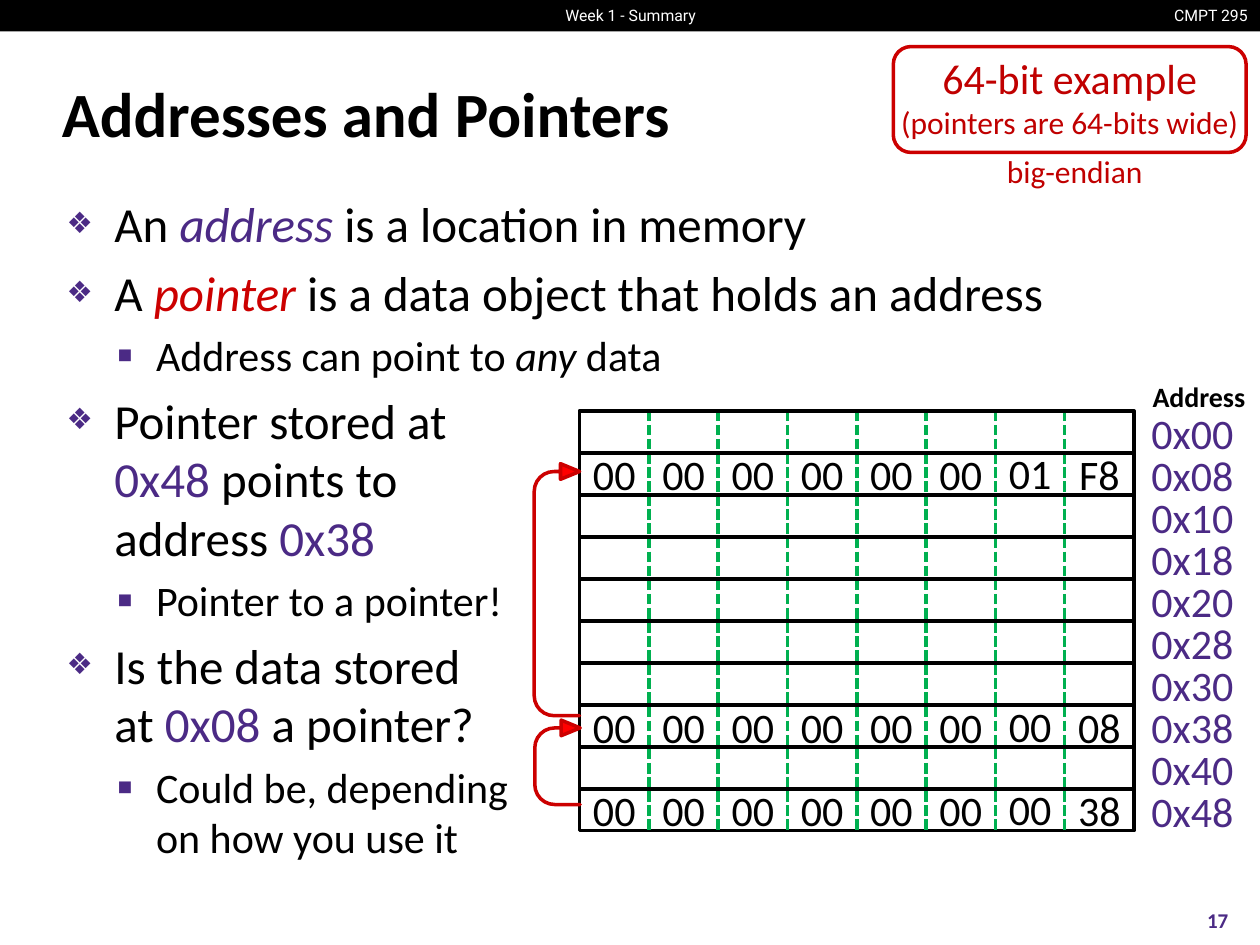
import dataclasses
import typing

import lxml.etree
import pptx
import pptx.dml.color
import pptx.enum.dml
import pptx.enum.shapes
import pptx.enum.text
import pptx.oxml.ns
import pptx.util

Pt = pptx.util.Pt
ALIGN = pptx.enum.text.PP_ALIGN
ANCHOR = pptx.enum.text.MSO_ANCHOR
SHAPE = pptx.enum.shapes.MSO_SHAPE
FIT = pptx.enum.text.MSO_AUTO_SIZE.SHAPE_TO_FIT_TEXT
BLACK, WHITE, PURPLE = "000000", "FFFFFF", "4B2A85"
RED, DARK_RED, BRIGHT_RED, GREEN = "CC0000", "C00000", "FF0000", "00B050"

# Memory grid, in points
GRID_LEFT, GRID_TOP = 331.2, 234.72
ROWS, COLUMNS = 10, 8
ROW_HEIGHT, CELL_WIDTH = 24, 39.6

Place = tuple[float, float, float, float]
GROWING = {"word_wrap": False, "auto_size": FIT}
TIGHT = {"word_wrap": False, "margin_left": 0, "margin_right": 0,
         "margin_top": 0, "margin_bottom": 0}


@dataclasses.dataclass
class Span:
    text: str
    size: float = 24
    color: str = BLACK
    bold: bool = False
    italic: bool = False
    font: str = "Calibri"


@dataclasses.dataclass
class Bullet:
    level: int
    spans: list[Span]


@dataclasses.dataclass
class BulletStyle:
    symbol: str
    percent: int
    left: float
    hanging: float


@dataclasses.dataclass
class MemoryWord:
    row: int
    lift: float
    data: str


def rgb(value: str) -> pptx.dml.color.RGBColor:
    return pptx.dml.color.RGBColor.from_string(value)


def apply(target: typing.Any, formats: dict) -> None:
    for name, value in formats.items():
        setattr(target, name, value)


def write(para, spans: list[Span]) -> None:
    for span in spans:
        for number, piece in enumerate(span.text.split("\n")):
            if number:
                para.add_line_break()
            run = para.add_run()
            run.text = piece
            apply(run.font, {"name": span.font, "size": Pt(span.size),
                             "bold": span.bold, "italic": span.italic})
            run.font.color.rgb = rgb(span.color)


def fill_frame(box, lines: list[Span], align=ALIGN.LEFT, formats: dict | None = None) -> None:
    frame = box.text_frame
    apply(frame, {"word_wrap": True, **(formats or {})})
    for number, span in enumerate(lines):
        para = frame.add_paragraph() if number else frame.paragraphs[0]
        para.alignment = align
        write(para, [span])


def add_text(page, place: Place, span: Span, align=ALIGN.LEFT, formats: dict | None = None) -> None:
    box = page.shapes.add_textbox(*map(Pt, place))
    fill_frame(box, [span], align, formats)


def add_box(page, kind, place: Place, fill: str | None = None, line: str | None = None):
    box = page.shapes.add_shape(kind, *map(Pt, place))
    box.shadow.inherit = False
    if fill:
        box.fill.solid()
        box.fill.fore_color.rgb = rgb(fill)
    else:
        box.fill.background()
    if line:
        box.line.color.rgb = rgb(line)
        box.line.width = Pt(2)
    else:
        box.line.fill.background()
    return box


def add_divider(page, x: float) -> None:
    line = page.shapes.add_connector(
        pptx.enum.shapes.MSO_CONNECTOR.STRAIGHT,
        Pt(x), Pt(GRID_TOP), Pt(x), Pt(GRID_TOP + ROWS * ROW_HEIGHT))
    line.line.color.rgb = rgb(GREEN)
    apply(line.line, {"width": Pt(2), "dash_style": pptx.enum.dml.MSO_LINE.SQUARE_DOT})
    child(line._element.spPr, "effectLst")


def add_row(page, row: int, fill: str | None = None) -> None:
    add_box(page, SHAPE.RECTANGLE, (GRID_LEFT, GRID_TOP + row * ROW_HEIGHT,
                                    COLUMNS * CELL_WIDTH, ROW_HEIGHT), fill, BLACK)


def add_pointer(page, place: Place) -> None:
    arrow = add_box(page, SHAPE.U_TURN_ARROW, place, BRIGHT_RED, RED)
    arrow.rotation = 270
    for number, value in enumerate((0, 0.172, 0.42, 0.438, 1)):
        arrow.adjustments[number] = value


def child(parent, name: str, **attributes: str):
    return lxml.etree.SubElement(parent, pptx.oxml.ns.qn("a:" + name), attributes)


def style_bullet(para, style: BulletStyle) -> None:
    properties = para._p.get_or_add_pPr()
    properties.set("marL", str(Pt(style.left)))
    properties.set("indent", str(Pt(-style.hanging)))
    child(child(properties, "spcBef"), "spcPct", val="20000")
    child(child(properties, "buClr"), "srgbClr", val=PURPLE)
    child(properties, "buSzPct", val=str(style.percent * 1000))
    child(properties, "buFont", typeface="Calibri")
    child(properties, "buChar", char=style.symbol)


BULLET_STYLES = [BulletStyle("❖", 60, 27.36, 27.36), BulletStyle("▪", 110, 51.12, 22.32)]
BULLETS = [
    Bullet(0, [Span("An ", 28), Span("address ", 28, PURPLE, italic=True),
               Span("is a location in memory", 28)]),
    Bullet(0, [Span("A ", 28), Span("pointer ", 28, RED, italic=True),
               Span("is a data object that holds an address", 28)]),
    Bullet(1, [Span("Address can point to "), Span("any", italic=True), Span(" data")]),
    Bullet(0, [Span("Pointer stored at\n", 28), Span("0x48", 28, PURPLE),
               Span(" points to \naddress ", 28), Span("0x38", 28, PURPLE)]),
    Bullet(1, [Span("Pointer to a pointer!")]),
    Bullet(0, [Span("Is the data stored\nat ", 28), Span("0x08", 28, PURPLE),
               Span(" a pointer?", 28)]),
    Bullet(1, [Span("Could be, depending\non how you use it")]),
]
WORDS = [
    MemoryWord(1, 2.4, "00 00 00 00 00 00 01 F8"),
    MemoryWord(7, 1.7, "00 00 00 00 00 00 00 08"),
    MemoryWord(9, 2.2, "00 00 00 00 00 00 00 38"),
]


def main() -> None:
    deck = pptx.Presentation()
    apply(deck, {"slide_width": Pt(720), "slide_height": Pt(540)})
    page = deck.slides.add_slide(deck.slide_layouts[5])

    # Header bar
    add_box(page, SHAPE.RECTANGLE, (0, 0, 720, 18), BLACK)
    add_text(page, (661.68, 0, 58.32, 18), Span("CMPT 295", 9, WHITE, font="Roboto"),
             ALIGN.RIGHT, GROWING)
    add_text(page, (309.6, 0, 101.52, 18), Span("Week 1 - Summary", 9, WHITE, font="Roboto"),
             ALIGN.CENTER, GROWING)

    # Title
    title = page.shapes.title
    apply(title, {"left": Pt(28.08), "top": Pt(34.56), "width": Pt(661.68), "height": Pt(59.76)})
    fill_frame(title, [Span("Addresses and Pointers", 36, bold=True)],
               formats={"vertical_anchor": ANCHOR.MIDDLE})

    # Bullets
    body = page.shapes.add_textbox(Pt(30.96), Pt(107.28), Pt(658.8), Pt(391.68))
    body.text_frame.word_wrap = True
    for number, bullet in enumerate(BULLETS):
        para = body.text_frame.add_paragraph() if number else body.text_frame.paragraphs[0]
        para.level = bullet.level
        style_bullet(para, BULLET_STYLES[bullet.level])
        write(para, bullet.spans)

    # Page number
    add_text(page, (671.76, 511.2, 48.24, 28.8), Span("17", 12, PURPLE, bold=True),
             ALIGN.CENTER, {"vertical_anchor": ANCHOR.MIDDLE})

    # Memory grid with its addresses
    add_row(page, ROWS - 1, WHITE)
    for row in range(ROWS):
        add_text(page, (650.88, 229.2 + row * ROW_HEIGHT, 61.92, 36),
                 Span(f"0x{row * COLUMNS:02X}", color=PURPLE), formats=GROWING)
    for column in range(1, COLUMNS):
        add_divider(page, GRID_LEFT + column * CELL_WIDTH)
    for row in range(ROWS - 1):
        add_row(page, row)
    add_text(page, (650.88, 213.12, 68.4, 26.64), Span("Address", 16, bold=True),
             ALIGN.CENTER, GROWING)

    # Pointer arrows
    add_pointer(page, (246.24, 324, 144, 25.92))
    add_pointer(page, (294.48, 422.64, 48.24, 25.92))

    # Stored bytes; the seventh column sits slightly higher
    for word in WORDS:
        for column, byte in enumerate(word.data.split()):
            top = GRID_TOP + word.row * ROW_HEIGHT - word.lift - (0.72 if column == 6 else 0)
            add_text(page, (GRID_LEFT + column * CELL_WIDTH, top, CELL_WIDTH, ROW_HEIGHT),
                     Span(byte), ALIGN.CENTER, TIGHT)

    # Word-size callout
    callout = add_box(page, SHAPE.ROUNDED_RECTANGLE, (510.48, 26.64, 201.6, 60.48), line=RED)
    fill_frame(callout, [Span("64-bit example", 24, DARK_RED),
                         Span("(pointers are 64-bits wide)", 18, DARK_RED)], ALIGN.CENTER,
               {**TIGHT, "word_wrap": True, "margin_bottom": Pt(3.6),
                "vertical_anchor": ANCHOR.MIDDLE})
    add_text(page, (513.36, 83.52, 201.6, 28.8), Span("big-endian", 18, DARK_RED),
             ALIGN.CENTER, {"auto_size": FIT})

    deck.save("out.pptx")


if __name__ == "__main__":
    main()
